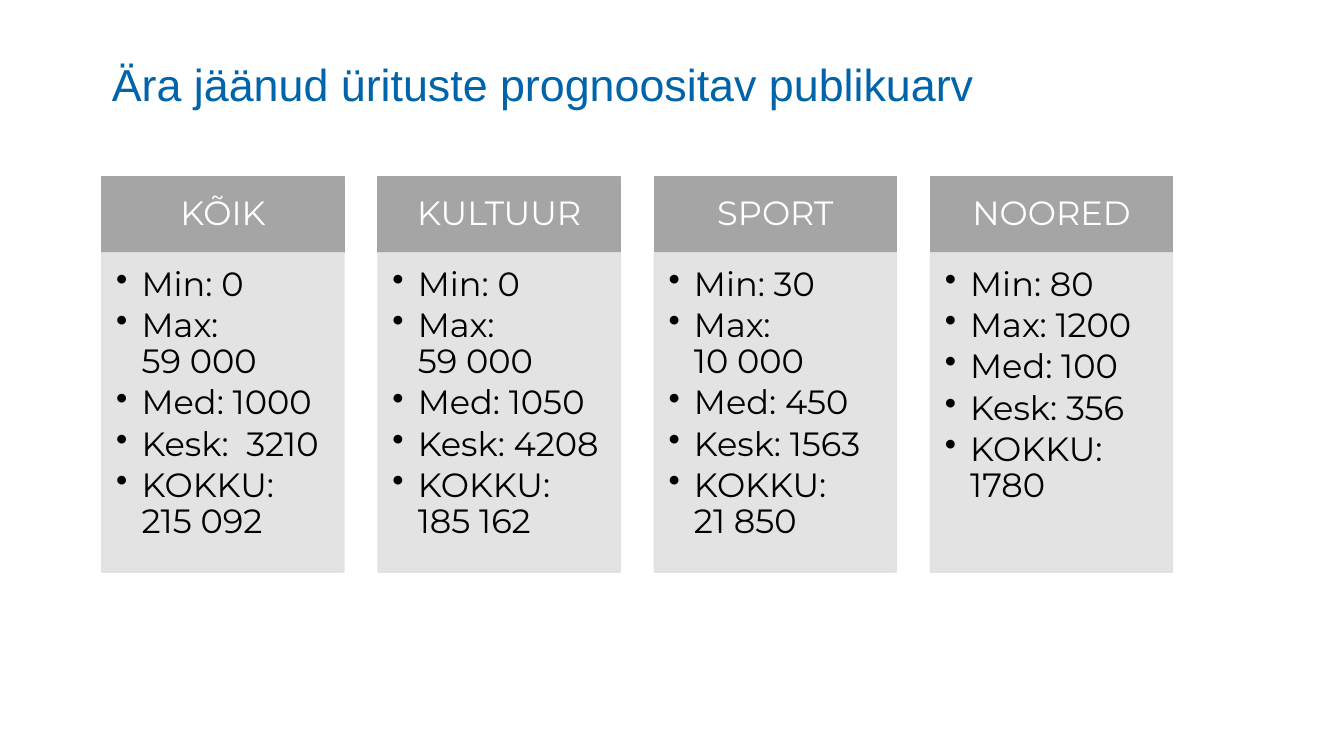
import pptx
import pptx.dml.color
import pptx.enum.shapes
import pptx.enum.text
import pptx.oxml
import pptx.oxml.ns
import pptx.util
from pptx.dml.color import RGBColor
from pptx.enum.text import MSO_ANCHOR, PP_ALIGN
from pptx.util import Cm

BLUE = RGBColor(0x00, 0x64, 0xAA)
GREY = RGBColor(0xA5, 0xA5, 0xA5)
LIGHT = RGBColor(0xE1, 0xE1, 0xE1)
WHITE = RGBColor(0xFF, 0xFF, 0xFF)
BLACK = RGBColor(0x00, 0x00, 0x00)

LEFT, TOP = 2.57, 4.45
COLUMN_WIDTH, COLUMN_PITCH = 6.1, 6.96
HEADER_HEIGHT, BODY_HEIGHT = 1.92, 8.05

COLUMNS = [
    ("KÕIK", ["Min: 0", "Max:\n59 000", "Med: 1000", "Kesk:  3210", "KOKKU:\n215 092"]),
    ("KULTUUR", ["Min: 0", "Max:\n59 000", "Med: 1050", "Kesk: 4208", "KOKKU:\n185 162"]),
    ("SPORT", ["Min: 30", "Max:\n10 000", "Med: 450", "Kesk: 1563", "KOKKU:\n21 850"]),
    ("NOORED", ["Min: 80", "Max: 1200", "Med: 100", "Kesk: 356", "KOKKU: 1780"]),
]


def add_bullet(p, indent):
    pPr = p._p.get_or_add_pPr()
    pPr.set("marL", str(indent))
    pPr.set("indent", str(-indent))
    bullet = pptx.oxml.parse_xml(
        f'<a:buChar {pptx.oxml.ns.nsdecls("a")} char="•"/>')
    pPr.append(bullet)


def write(tf, texts, font="Montserrat", size=24, color=BLACK, align=PP_ALIGN.LEFT,
          anchor=MSO_ANCHOR.TOP, margins=(0.25, 0.13, 0.25, 0.13), bullets=False,
          line_spacing=0.9, space_after=0):
    """Fill a text frame with one paragraph per text; margins are left, top, right, bottom in cm."""
    tf.word_wrap = True
    tf.vertical_anchor = anchor
    tf.margin_left, tf.margin_top, tf.margin_right, tf.margin_bottom = map(Cm, margins)
    for i, text in enumerate(texts):
        p = tf.add_paragraph() if i else tf.paragraphs[0]
        p.text = text
        if bullets:
            add_bullet(p, Cm(0.64))
        p.alignment = align
        p.line_spacing = line_spacing
        p.space_after = pptx.util.Pt(space_after)
        for r in p.runs:
            r.font.name = font
            r.font.size = pptx.util.Pt(size)
            r.font.color.rgb = color


def add_box(s, left, top, height, color, opacity=100):
    sp = s.shapes.add_shape(pptx.enum.shapes.MSO_SHAPE.RECTANGLE,
                            Cm(left), Cm(top), Cm(COLUMN_WIDTH), Cm(height))
    sp.shadow.inherit = False
    sp.fill.solid()
    sp.fill.fore_color.rgb = color
    sp.line.color.rgb = color
    sp.line.width = pptx.util.Pt(1)
    if opacity < 100:
        for clr in sp._element.spPr.iter(pptx.oxml.ns.qn("a:srgbClr")):
            clr.append(pptx.oxml.parse_xml(
                f'<a:alpha {pptx.oxml.ns.nsdecls("a")} val="{opacity * 1000}"/>'))
    return sp


def add_column(s, left, heading, figures):
    header = add_box(s, left, TOP, HEADER_HEIGHT, GREY)
    write(header.text_frame, [heading], color=WHITE, align=PP_ALIGN.CENTER,
          anchor=MSO_ANCHOR.MIDDLE, margins=(0.48, 0.28, 0.48, 0.28))
    body = add_box(s, left, TOP + HEADER_HEIGHT, BODY_HEIGHT, LIGHT, opacity=90)
    write(body.text_frame, figures, margins=(0.36, 0.36, 0.48, 0.53),
          bullets=True, space_after=3.6)


def add_title(s, text):
    title = s.shapes.title
    title.left, title.top, title.width, title.height = Cm(LEFT), Cm(1.19), Cm(29.21), Cm(2.64)
    write(title.text_frame, [text], font="Arial", size=32, color=BLUE,
          margins=(0.25, 0.25, 0.25, 0.13), line_spacing=1.0)


def main():
    prs = pptx.Presentation()
    prs.slide_width, prs.slide_height = Cm(33.87), Cm(19.05)
    s = prs.slides.add_slide(prs.slide_layouts[5])
    add_title(s, "Ära jäänud ürituste prognoositav publikuarv")
    for i, (heading, figures) in enumerate(COLUMNS):
        add_column(s, LEFT + i * COLUMN_PITCH, heading, figures)
    prs.save("out.pptx")


if __name__ == "__main__":
    main()
